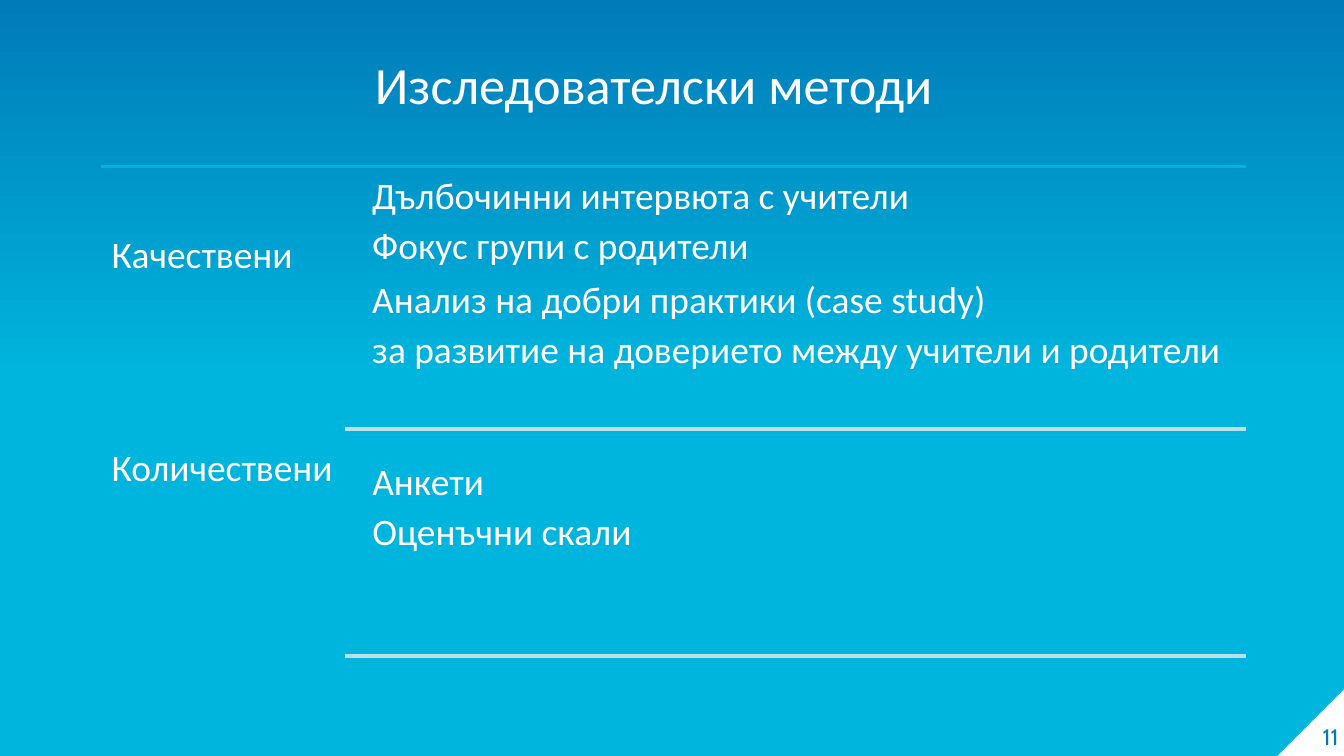
from copy import deepcopy

from pptx import Presentation
from pptx.dml.color import RGBColor
from pptx.enum.shapes import MSO_CONNECTOR, MSO_SHAPE
from pptx.enum.text import MSO_ANCHOR, MSO_AUTO_SIZE, PP_ALIGN
from pptx.oxml.ns import qn
from pptx.oxml.xmlchemy import OxmlElement
from pptx.util import Inches, Pt

WHITE = RGBColor(0xFF, 0xFF, 0xFF)
CYAN = RGBColor(0x00, 0xB5, 0xDD)
BLUE = RGBColor(0x00, 0x7B, 0xB9)
PALE = RGBColor(0xBD, 0xDE, 0xEF)

LEFT, SPLIT, RIGHT = 0.75, 2.57, 9.27
TOP = 1.24
RULES = [(LEFT, TOP, CYAN), (SPLIT, 3.19, PALE), (SPLIT, 4.88, PALE)]
LABELS = ["Качествени", "Количествени"]
DEPTH = [
    "Дълбочинни интервюта с учители",
    "Фокус групи с родители",
    "Анализ на добри практики (case study)",
    "за развитие на довериeто между учители и родители",
]
COUNT = ["Aнкети", "Оценъчни скали"]


def paint(slide):
    """Fill the background with a gradient that is plain in its lower half."""
    fill = slide.background.fill
    fill.gradient()
    fill.gradient_angle = 90
    first = slide.element.find(".//" + qn("a:gs"))
    first.addnext(deepcopy(first))
    stops = [(0, CYAN), (0.5, CYAN), (1, BLUE)]
    for stop, (place, color) in zip(fill.gradient_stops, stops):
        stop.position = place
        stop.color.rgb = color


def write(shape, lines, size=20, font="Calibri", color=WHITE, align=PP_ALIGN.LEFT,
          anchor=MSO_ANCHOR.TOP, pad=(0.08, 0.08), after=0, tight=()):
    """Put formatted paragraphs into a shape; pad is the side and top inset."""
    frame = shape.text_frame
    frame.word_wrap = True
    frame.auto_size = MSO_AUTO_SIZE.NONE
    frame.vertical_anchor = anchor
    frame.margin_left = frame.margin_right = Inches(pad[0])
    frame.margin_top = Inches(pad[1])
    frame.margin_bottom = Inches(pad[0])
    frame.text = "\n".join(lines)
    for row, para in enumerate(frame.paragraphs):
        para.alignment = align
        para.line_spacing = 0.9 if row in tight else 1.0
        para.space_before = Pt(0)
        para.space_after = Pt(after)
        face = para.runs[0].font
        face.name, face.size, face.color.rgb = font, Pt(size), color


def box(slide, left, top, width, height, lines, **style):
    """Add a text box."""
    shape = slide.shapes.add_textbox(*map(Inches, (left, top, width, height)))
    write(shape, lines, **style)


def rule(slide, left, top, color):
    """Add a level line that ends at the right margin."""
    line = slide.shapes.add_connector(
        MSO_CONNECTOR.STRAIGHT, *map(Inches, (left, top, RIGHT, top)))
    line.line.color.rgb = color
    line.line.width = Pt(2)
    line.element.spPr.append(OxmlElement("a:effectLst"))


def corner(slide):
    """Add the white corner with the page number."""
    shape = slide.shapes.add_shape(
        MSO_SHAPE.RIGHT_TRIANGLE, *map(Inches, (9.5, 5.12, 0.51, 0.51)))
    shape.shadow.inherit = False
    shape.fill.solid()
    shape.fill.fore_color.rgb = WHITE
    shape.line.fill.background()
    shape.element.spPr.find(qn("a:xfrm")).set("flipH", "1")
    box(slide, 9.46, 5.07, 0.5, 0.51, ["11"], size=12, font="Cabin", color=BLUE,
        align=PP_ALIGN.RIGHT, anchor=MSO_ANCHOR.BOTTOM, pad=(0, 0))


def head(slide, text):
    """Place and format the title."""
    title = slide.shapes.title
    title.left, title.top = Inches(2.69), Inches(0.33)
    title.width, title.height = Inches(5.47), Inches(0.57)
    write(title, [text], size=28, pad=(0.1, 0.06))


def main():
    """Build the slide and save it."""
    deck = Presentation()
    deck.slide_width = Inches(10)
    deck.slide_height = deck.slide_width * 9 // 16
    slide = deck.slides.add_slide(deck.slide_layouts[5])
    paint(slide)
    corner(slide)
    head(slide, "Изследователски методи")
    for left, top, color in RULES:
        rule(slide, left, top, color)
    box(slide, LEFT, TOP, SPLIT - LEFT, 3.59, LABELS, pad=(0.08, 0.52),
        after=92.5, tight=(0, 1))
    box(slide, 2.69, TOP, 6.57, 2.04, DEPTH, after=5, tight=(0, 1, 3))
    box(slide, 2.69, 3.37, 6.42, 1.28, COUNT, after=5, tight=(0, 1))
    deck.save("out.pptx")


if __name__ == "__main__":
    main()
